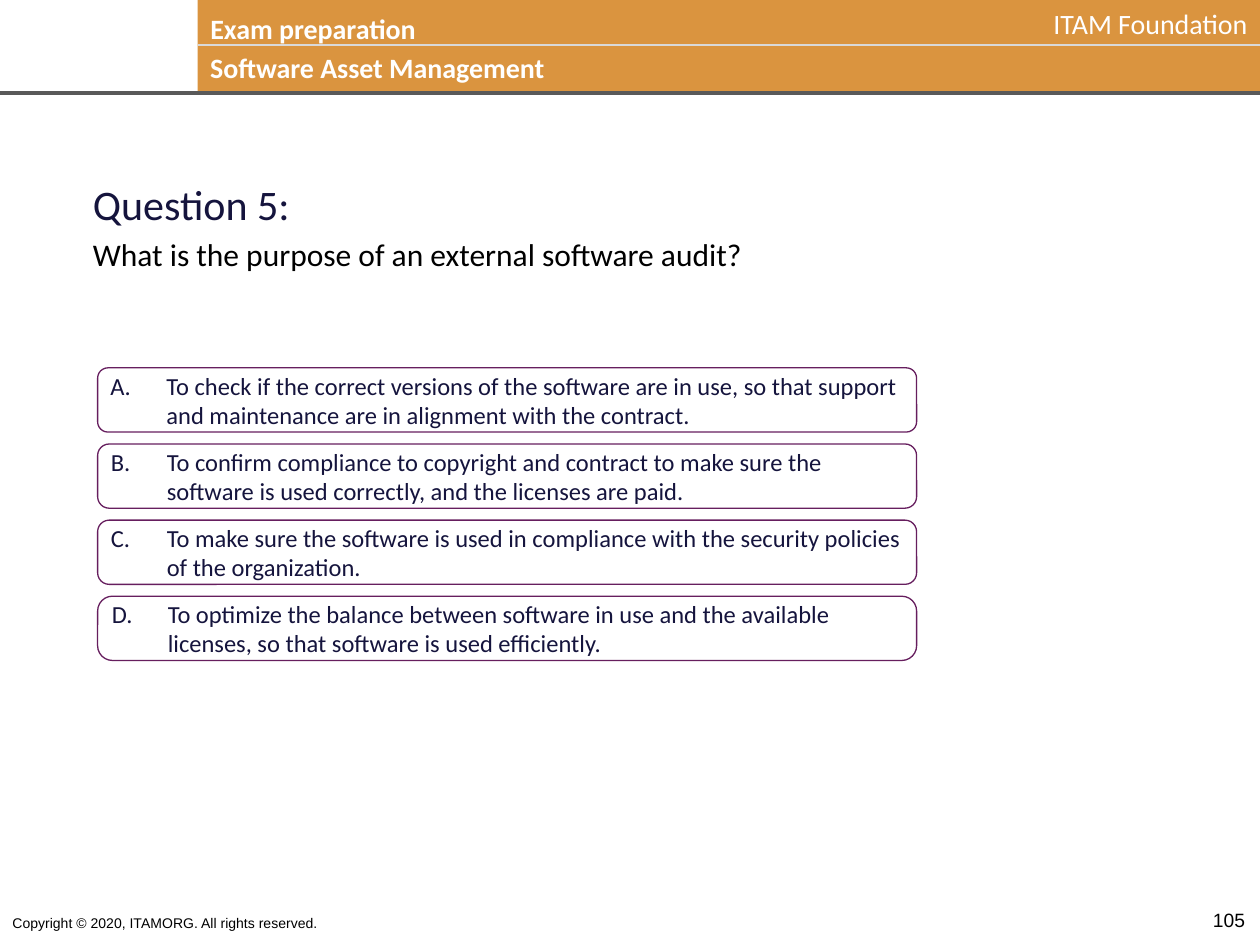
"""Build an exam preparation slide with one multiple-choice question."""
from lxml import etree
from pptx import Presentation
from pptx import util as u
from pptx.dml.color import RGBColor
from pptx.enum import shapes, text

Pt = u.Pt
COLORS = {
    "band": "DA943F", "rule": "595959", "divider": "D9D9D9", "white": "FFFFFF",
    "black": "000000", "navy": "15143D", "plum": "661E5E",
}


def color(name):
    return RGBColor.from_string(COLORS[name])


def write(frame, content, size=16, ink="white", font="Calibri", bold=False,
          align=text.PP_ALIGN.LEFT, anchor=text.MSO_ANCHOR.TOP, before=0, hang=0, more=False):
    frame.word_wrap = True
    frame.auto_size = text.MSO_AUTO_SIZE.NONE
    frame.vertical_anchor = anchor
    paragraph = frame.add_paragraph() if more else frame.paragraphs[0]
    paragraph.alignment = align
    if before:
        paragraph.space_before = Pt(before)
    if hang:
        properties = paragraph._p.get_or_add_pPr()
        properties.set("marL", str(Pt(hang)))
        properties.set("indent", str(-Pt(hang)))
    run = paragraph.add_run()
    run.text = content
    run.font.size = Pt(size)
    run.font.name = font
    run.font.bold = bold
    run.font.color.rgb = color(ink)


deck = Presentation()
deck.slide_width, deck.slide_height = Pt(720), Pt(540)
slide = deck.slides.add_slide(deck.slide_layouts[5])

band = slide.shapes.add_shape(shapes.MSO_SHAPE.RECTANGLE, Pt(113), Pt(-0.5), Pt(607.5), Pt(53))
band.shadow.inherit = False
band.fill.solid()
band.fill.fore_color.rgb = color("band")
band.line.fill.background()

for left, y, ink, width in [(0, 53.2, "rule", 2.25), (113, 25.7, "divider", 0.75)]:
    rule = slide.shapes.add_connector(shapes.MSO_CONNECTOR.STRAIGHT, Pt(left), Pt(y), Pt(720), Pt(y))
    rule.line.color.rgb = color(ink)
    rule.line.width = Pt(width)
    etree.SubElement(rule._element.spPr, "{http://schemas.openxmlformats.org/drawingml/2006/main}effectLst")

heading = slide.shapes.title
slide.shapes._spTree.append(heading._element)
heading.left, heading.top, heading.width, heading.height = Pt(113), Pt(3), Pt(497), Pt(21)
write(heading.text_frame, "Exam preparation", bold=True)

labels = [
    ((113, 25.4, 497, 21), "Software Asset Management", {"bold": True}),
    ((548, 0, 172, 26.6), "ITAM Foundation", {"align": text.PP_ALIGN.RIGHT}),
    ((0, 519, 342, 17), "Copyright © 2020, ITAMORG. All rights reserved.",
     {"size": 8, "ink": "black", "font": "Arial"}),
    ((681, 515.5, 42.5, 24.5), "105",
     {"size": 11, "ink": "black", "font": "Arial", "align": text.PP_ALIGN.CENTER}),
]
for place, content, style in labels:
    label = slide.shapes.add_textbox(*map(Pt, place))
    write(label.text_frame, content, **style)

question = slide.shapes.add_textbox(Pt(46), Pt(98.5), Pt(544), Pt(61)).text_frame
write(question, "Question 5:", size=24, ink="navy")
write(question, "What is the purpose of an external software audit?",
      size=18, ink="black", before=3.5, more=True)

answers = [
    ("A", 0.16, "To check if the correct versions of the software are in use, so that support "
     "and maintenance are in alignment with the contract."),
    ("B", 0.18, "To confirm compliance to copyright and contract to make sure the software is "
     "used correctly, and the licenses are paid."),
    ("C", 0.18, "To make sure the software is used in compliance with the security policies of "
     "the organization."),
    ("D", 0.23, "To optimize the balance between software in use and the available licenses, so "
     "that software is used efficiently."),
]
for row, (letter, rounding, answer) in enumerate(answers):
    option = slide.shapes.add_shape(shapes.MSO_SHAPE.ROUNDED_RECTANGLE,
                                    Pt(55.8), Pt(210.2 + row * 43.5), Pt(468), Pt(36.7))
    option.adjustments[0] = rounding
    option.shadow.inherit = False
    option.fill.background()
    option.line.color.rgb = color("plum")
    option.line.width = Pt(0.75)
    frame = option.text_frame
    frame.margin_left = frame.margin_right = Pt(5.6)
    frame.margin_top = frame.margin_bottom = Pt(2.9)
    write(frame, f"{letter}.\t{answer}", size=14, ink="navy",
          anchor=text.MSO_ANCHOR.MIDDLE, hang=32)

deck.save("out.pptx")
